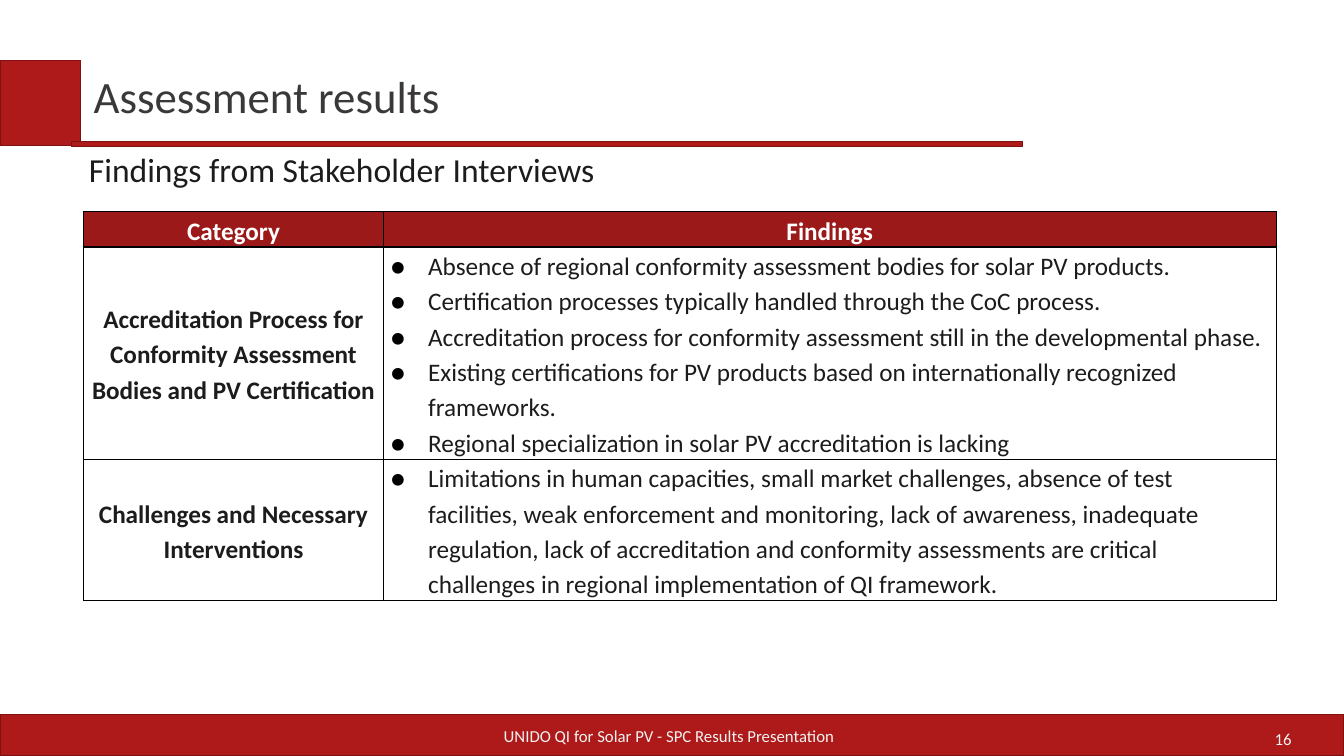
from lxml import etree
from pptx import Presentation
from pptx import util as u
from pptx.dml.color import RGBColor
from pptx.enum import shapes, text
from pptx.oxml.ns import nsdecls

RED = RGBColor(0xAE, 0x19, 0x19)
DARK_RED = RGBColor(0x7E, 0x12, 0x12)
HEADER_RED = RGBColor(0x9B, 0x19, 0x19)
WHITE = RGBColor(0xFF, 0xFF, 0xFF)
PALE = RGBColor(0xF2, 0xF2, 0xF2)
INK = RGBColor(0x1D, 0x1C, 0x1C)
GREY = RGBColor(0x3A, 0x38, 0x38)

LEFT, CENTER, RIGHT = text.PP_ALIGN.LEFT, text.PP_ALIGN.CENTER, text.PP_ALIGN.RIGHT
TOP, MIDDLE = text.MSO_ANCHOR.TOP, text.MSO_ANCHOR.MIDDLE


def add_xml(parent, tag, attributes="", content=""):
    parent.append(etree.fromstring(
        f"<a:{tag} {nsdecls('a')} {attributes}>{content}</a:{tag}>"))


def write(paragraph, words, size=18, color=INK, bold=False, align=LEFT,
          spacing=1.0, bullet=None):
    """Fill a paragraph; bullet is a character, or None for plain text."""
    properties = paragraph._p.get_or_add_pPr()
    indent = u.Cm(0.95) if bullet else 0
    properties.set("marL", str(indent))
    properties.set("indent", str(-indent))
    if bullet:
        add_xml(properties, "buClr", content='<a:srgbClr val="000000"/>')
        add_xml(properties, "buFont", 'typeface="Calibri"')
        add_xml(properties, "buChar", f'char="{bullet}"')
    else:
        add_xml(properties, "buNone")
    paragraph.alignment = align
    paragraph.line_spacing = spacing
    paragraph.space_before = u.Pt(0)
    run = paragraph.add_run()
    run.text = words
    run.font.name = "Calibri"
    run.font.size = u.Pt(size)
    run.font.bold = bold
    run.font.color.rgb = color


presentation = Presentation()
presentation.slide_width = u.Cm(33.87)
presentation.slide_height = u.Cm(19.05)
slide = presentation.slides.add_slide(presentation.slide_layouts[1])

# Red bands: footer, title block, title rule
for left, top, width, height in [
    (0, 18.01, 33.87, 1.02),
    (0, 1.52, 2.04, 2.14),
    (1.8, 3.56, 23.98, 0.13),
]:
    band = slide.shapes.add_shape(
        shapes.MSO_SHAPE.RECTANGLE, u.Cm(left), u.Cm(top), u.Cm(width), u.Cm(height))
    band.shadow.inherit = False
    band.fill.solid()
    band.fill.fore_color.rgb = RED
    band.line.color.rgb = DARK_RED
    band.line.width = u.Pt(0.85)

# Title, subtitle, footer and page number
title, subtitle = slide.placeholders
footer, page_number = (slide.shapes.add_textbox(0, 0, 0, 0) for _ in range(2))
for shape, box, inset, anchor, words, style in [
    (title, (2.11, 1.52, 21.29, 1.93), 0.25, MIDDLE, "Assessment results",
     dict(size=32, color=GREY, spacing=0.9)),
    (subtitle, (1.9, 3.4, 21.36, 1.93), 0.34, TOP,
     "Findings from Stakeholder Interviews", dict(size=24)),
    (footer, (9.17, 18.03, 15.39, 1.02), 0.25, MIDDLE,
     "UNIDO QI for Solar PV - SPC Results Presentation",
     dict(size=12, color=PALE, align=CENTER)),
    (page_number, (24.82, 18.11, 7.98, 1.02), 0.25, MIDDLE, "16",
     dict(size=12, color=PALE, align=RIGHT)),
]:
    shape.left, shape.top, shape.width, shape.height = map(u.Cm, box)
    frame = shape.text_frame
    frame.word_wrap = True
    frame.auto_size = text.MSO_AUTO_SIZE.NONE
    frame.vertical_anchor = anchor
    frame.margin_left = frame.margin_right = u.Cm(inset)
    frame.margin_top = frame.margin_bottom = u.Cm(inset if shape is not page_number else 0.13)
    write(frame.paragraphs[0], words, **style)

# Findings table
rows = [
    ("Category", ["Findings"]),
    ("Accreditation Process for Conformity Assessment Bodies and PV Certification", [
        "Absence of regional conformity assessment bodies for solar PV products.",
        "Certification processes typically handled through the CoC process.",
        "Accreditation process for conformity assessment still in the developmental phase.",
        "Existing certifications for PV products based on internationally recognized frameworks.",
        "Regional specialization in solar PV accreditation is lacking",
    ]),
    ("Challenges and Necessary Interventions", [
        "Limitations in human capacities, small market challenges, absence of test "
        "facilities, weak enforcement and monitoring, lack of awareness, inadequate "
        "regulation, lack of accreditation and conformity assessments are critical "
        "challenges in regional implementation of QI framework.",
    ]),
]
table = slide.shapes.add_table(
    len(rows), 2, u.Cm(2.11), u.Cm(5.33), u.Cm(30.05), u.Cm(9.38)).table
for column, width in zip(table.columns, (7.55, 22.5)):
    column.width = u.Cm(width)
for row, height in zip(table.rows, (0.84, 4.98, 3.56)):
    row.height = u.Cm(height)

for row_index, (category, findings) in enumerate(rows):
    is_header = row_index == 0
    for column_index, lines in enumerate(([category], findings)):
        cell = table.cell(row_index, column_index)
        is_list = column_index == 1 and not is_header
        cell.margin_left = cell.margin_right = u.Cm(0.18)
        cell.margin_top = cell.margin_bottom = 0
        cell.vertical_anchor = TOP if is_list else MIDDLE
        for side in "LRTB":
            add_xml(cell._tc.get_or_add_tcPr(), f"ln{side}", f'w="{u.Pt(1)}"',
                    '<a:solidFill><a:srgbClr val="000000"/></a:solidFill>')
        if is_header:
            cell.fill.solid()
            cell.fill.fore_color.rgb = HEADER_RED
        else:
            cell.fill.background()
        frame = cell.text_frame
        for line_index, line in enumerate(lines):
            paragraph = frame.add_paragraph() if line_index else frame.paragraphs[0]
            write(paragraph, line, color=WHITE if is_header else INK,
                  bold=not is_list, align=LEFT if is_list else CENTER,
                  spacing=1.15, bullet="●" if is_list else None)

presentation.save("out.pptx")
